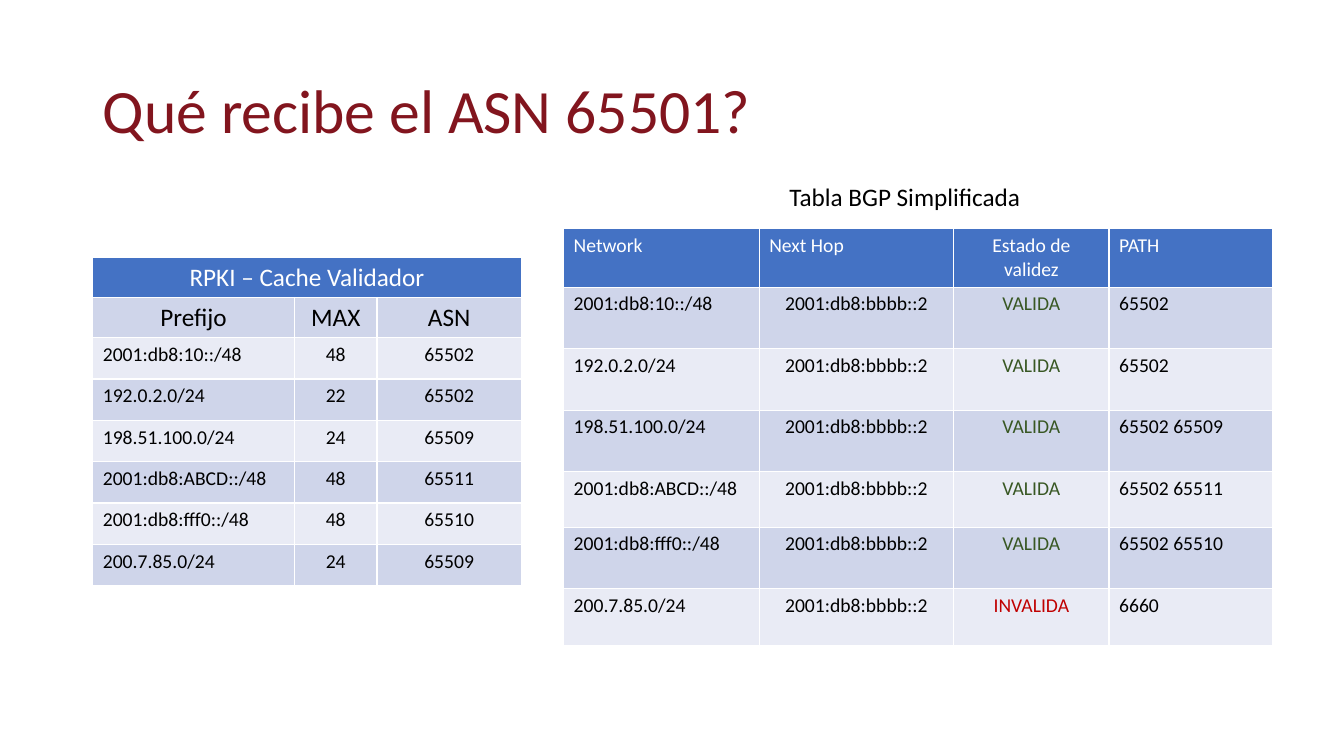
from pptx import Presentation
from pptx import util as u
from pptx.dml.color import RGBColor
from pptx.enum import text

# Content
TITLE = "Qué recibe el ASN 65501?"
BGP_CAPTION = "Tabla BGP Simplificada"
NEXT_HOP = "2001:db8:bbbb::2"
BGP_HEADER = ("Network", "Next Hop", "Estado de validez", "PATH")
BGP_ROUTES = [
    ("2001:db8:10::/48", "VALIDA", "65502"),
    ("192.0.2.0/24", "VALIDA", "65502"),
    ("198.51.100.0/24", "VALIDA", "65502 65509"),
    ("2001:db8:ABCD::/48", "VALIDA", "65502 65511"),
    ("2001:db8:fff0::/48", "VALIDA", "65502 65510"),
    ("200.7.85.0/24", "INVALIDA", "6660"),
]
RPKI_ROWS = [
    ("RPKI – Cache Validador", "", ""),
    ("Prefijo", "MAX", "ASN"),
    ("2001:db8:10::/48", "48", "65502"),
    ("192.0.2.0/24", "22", "65502"),
    ("198.51.100.0/24", "24", "65509"),
    ("2001:db8:ABCD::/48", "48", "65511"),
    ("2001:db8:fff0::/48", "48", "65510"),
    ("200.7.85.0/24", "24", "65509"),
]

# Colours
BLACK = RGBColor(0x00, 0x00, 0x00)
WHITE = RGBColor(0xFF, 0xFF, 0xFF)
DARK_RED = RGBColor(0x82, 0x15, 0x1E)
HEADER_BLUE = RGBColor(0x44, 0x72, 0xC4)
BANDS = (RGBColor(0xE9, 0xEB, 0xF5), RGBColor(0xCF, 0xD5, 0xEA))
STATE_COLORS = {"VALIDA": RGBColor(0x38, 0x57, 0x23),
                "INVALIDA": RGBColor(0xC0, 0x00, 0x00)}

LEFT, CENTER = text.PP_ALIGN.LEFT, text.PP_ALIGN.CENTER


def write(frame, words, size=14, color=BLACK, align=LEFT):
    frame.text = words
    paragraph = frame.paragraphs[0]
    paragraph.alignment = align
    font = paragraph.runs[0].font
    font.name, font.size, font.bold = "Calibri", u.Pt(size), False
    font.color.rgb = color
    return paragraph


def place(shape, left, top, width, height):
    shape.left, shape.top = u.Inches(left), u.Inches(top)
    shape.width, shape.height = u.Inches(width), u.Inches(height)


def add_grid(slide, left, top, widths, heights, rows, style):
    """Add a banded table; style(row, column) gives size and alignment."""
    frame = slide.shapes.add_table(
        len(rows), len(widths), u.Inches(left), u.Inches(top),
        u.Inches(sum(widths)), u.Inches(sum(heights)))
    table = frame.table
    for column, width in zip(table.columns, widths):
        column.width = u.Inches(width)
    for r, (values, height) in enumerate(zip(rows, heights)):
        table.rows[r].height = u.Inches(height)
        for c, value in enumerate(values):
            cell = table.cell(r, c)
            cell.fill.solid()
            cell.fill.fore_color.rgb = BANDS[r % 2] if r else HEADER_BLUE
            if value:
                size, align = style(r, c)
                color = STATE_COLORS.get(value, BLACK) if r else WHITE
                write(cell.text_frame, value, size, color, align)
    return table


def bgp_style(row, column):
    centered = column == 2 or (column == 1 and row > 0)
    return 14, CENTER if centered else LEFT


def rpki_style(row, column):
    return 18 if row < 2 else 14, CENTER if row < 2 or column else LEFT


def main():
    presentation = Presentation()
    presentation.slide_width = u.Inches(13.33)
    presentation.slide_height = u.Inches(7.5)
    slide = presentation.slides.add_slide(presentation.slide_layouts[5])

    # Title
    title = slide.shapes.title
    place(title, 0.92, 0.4, 11.5, 1.45)
    title.text_frame.vertical_anchor = text.MSO_ANCHOR.MIDDLE
    write(title.text_frame, TITLE, size=44, color=DARK_RED).line_spacing = 0.9

    # BGP table and its caption
    bgp_rows = [BGP_HEADER] + [(network, NEXT_HOP, state, route)
                               for network, state, route in BGP_ROUTES]
    add_grid(slide, 5.59, 2.27, (1.94, 1.93, 1.54, 1.62),
             (0.58, 0.61, 0.61, 0.61, 0.55, 0.61, 0.57), bgp_rows, bgp_style)
    caption = slide.shapes.add_textbox(0, 0, 0, 0)
    place(caption, 7.73, 1.75, 2.52, 0.4)
    caption.text_frame.word_wrap = False
    caption.text_frame.auto_size = text.MSO_AUTO_SIZE.SHAPE_TO_FIT_TEXT
    write(caption.text_frame, BGP_CAPTION, size=18)

    # RPKI validator cache
    rpki = add_grid(slide, 0.92, 2.55, (2, 0.82, 1.43),
                    [0.4] * 2 + [0.41] * 6, RPKI_ROWS, rpki_style)
    rpki.cell(0, 0).merge(rpki.cell(0, 2))

    presentation.save("out.pptx")


if __name__ == "__main__":
    main()
